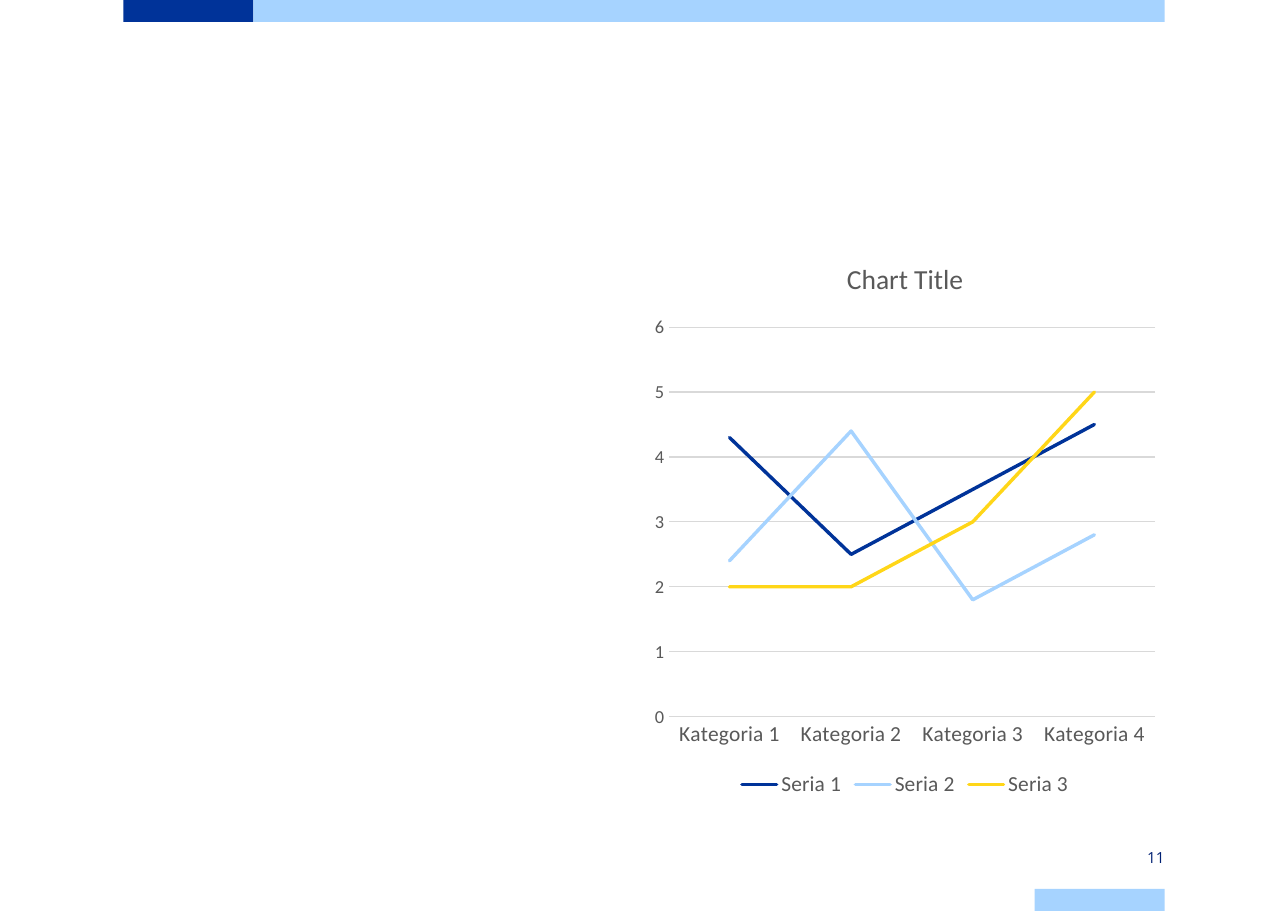
from pptx import Presentation
from pptx.chart.data import CategoryChartData
from pptx.dml.color import RGBColor
from pptx.enum.chart import XL_CHART_TYPE, XL_LEGEND_POSITION, XL_MARKER_STYLE, XL_TICK_MARK
from pptx.enum.shapes import MSO_SHAPE
from pptx.enum.text import MSO_ANCHOR, PP_ALIGN
from pptx.util import Pt

RECTANGLE = MSO_SHAPE.RECTANGLE
LINE_CHART = XL_CHART_TYPE.LINE
LEGEND_BOTTOM = XL_LEGEND_POSITION.BOTTOM
NO_MARKER = XL_MARKER_STYLE.NONE
NO_TICK = XL_TICK_MARK.NONE
MIDDLE = MSO_ANCHOR.MIDDLE
RIGHT = PP_ALIGN.RIGHT

PX = 9144  # EMU per px, 100 px to the inch
PAGE_WIDTH, PAGE_HEIGHT = 1169, 827
MARGIN, BAR_HEIGHT, TAB_WIDTH = 112, 20, 118
CONTENT_RIGHT = 1057

COLORS = {
    "navy": "003399",
    "sky": "A6D3FF",
    "yellow": "FFD618",
    "grid": "D9D9D9",
    "label": "595959",
    "number": "002073",
}

CATEGORIES = [f"Kategoria {number}" for number in range(1, 5)]
SERIES = [
    ("Seria 1", (4.3, 2.5, 3.5, 4.5), "navy"),
    ("Seria 2", (2.4, 4.4, 1.8, 2.8), "sky"),
    ("Seria 3", (2, 2, 3, 5), "yellow"),
]


def color(name):
    return RGBColor.from_string(COLORS[name])


def emu(box):
    return [length * PX for length in box]


def style_font(font, size, color_name, family="Calibri"):
    font.size = Pt(size)
    font.name = family
    font.bold = False
    font.color.rgb = color(color_name)


def style_line(line, color_name, width):
    line.color.rgb = color(color_name)
    line.width = Pt(width)


def add_bar(page, box, color_name):
    bar = page.shapes.add_shape(RECTANGLE, *emu(box))
    bar.shadow.inherit = False
    bar.fill.solid()
    bar.fill.fore_color.rgb = color(color_name)
    bar.line.fill.background()


def add_header(page, box):
    left, top, width, height = box
    add_bar(page, (left, top, TAB_WIDTH, height), "navy")
    add_bar(page, (left + TAB_WIDTH, top, width - TAB_WIDTH, height), "sky")


def add_footer(page, box, number):
    left, top, width, height = box
    # Page number above the bottom bar
    number_box = page.shapes.add_textbox(*emu((left, top, width, BAR_HEIGHT)))
    frame = number_box.text_frame
    frame.word_wrap = True
    frame.vertical_anchor = MIDDLE
    frame.margin_left = frame.margin_right = 0
    frame.margin_top = frame.margin_bottom = 8 * PX
    frame.text = number
    para = frame.paragraphs[0]
    para.alignment = RIGHT
    style_font(para.runs[0].font, 10, "number", "Open Sans")
    # Bar on the page edge
    add_bar(page, (left, top + height - BAR_HEIGHT, width, BAR_HEIGHT), "sky")


def add_line_chart(page, box):
    data = CategoryChartData()
    data.categories = CATEGORIES
    for name, values, _ in SERIES:
        data.add_series(name, values)
    chart = page.shapes.add_chart(LINE_CHART, *emu(box), data).chart
    style_font(chart.font, 10, "label")

    # Title and legend
    chart.has_title = True
    title = chart.chart_title
    title.include_in_layout = False
    title.text_frame.text = "Chart Title"
    style_font(title.text_frame.paragraphs[0].runs[0].font, 18, "label")
    chart.has_legend = True
    chart.legend.position = LEGEND_BOTTOM
    chart.legend.include_in_layout = False
    style_font(chart.legend.font, 14, "label")

    # Axes
    for axis, size in ((chart.category_axis, 14), (chart.value_axis, 12)):
        axis.major_tick_mark = axis.minor_tick_mark = NO_TICK
        style_font(axis.tick_labels.font, size, "label")
    style_line(chart.category_axis.format.line, "grid", 0.75)
    chart.value_axis.minimum_scale = 0
    chart.value_axis.maximum_scale = 6
    chart.value_axis.major_unit = 1
    chart.value_axis.format.line.fill.background()
    style_line(chart.value_axis.major_gridlines.format.line, "grid", 0.75)

    # Series lines
    plot = chart.plots[0]
    plot.vary_by_categories = False
    for series, (_, _, color_name) in zip(plot.series, SERIES):
        series.smooth = False
        series.marker.style = NO_MARKER
        style_line(series.format.line, color_name, 2.25)
        series.format.line._get_or_add_ln().set("cap", "rnd")


def main():
    deck = Presentation()
    deck.slide_width, deck.slide_height = PAGE_WIDTH * PX, PAGE_HEIGHT * PX
    page = deck.slides.add_slide(deck.slide_layouts[6])
    add_header(page, (MARGIN, 0, CONTENT_RIGHT - MARGIN, BAR_HEIGHT))
    add_line_chart(page, (585, 216, 473, 512))
    add_footer(page, (CONTENT_RIGHT - TAB_WIDTH, 768, TAB_WIDTH, PAGE_HEIGHT - 768), "11")
    deck.save("out.pptx")


if __name__ == "__main__":
    main()
